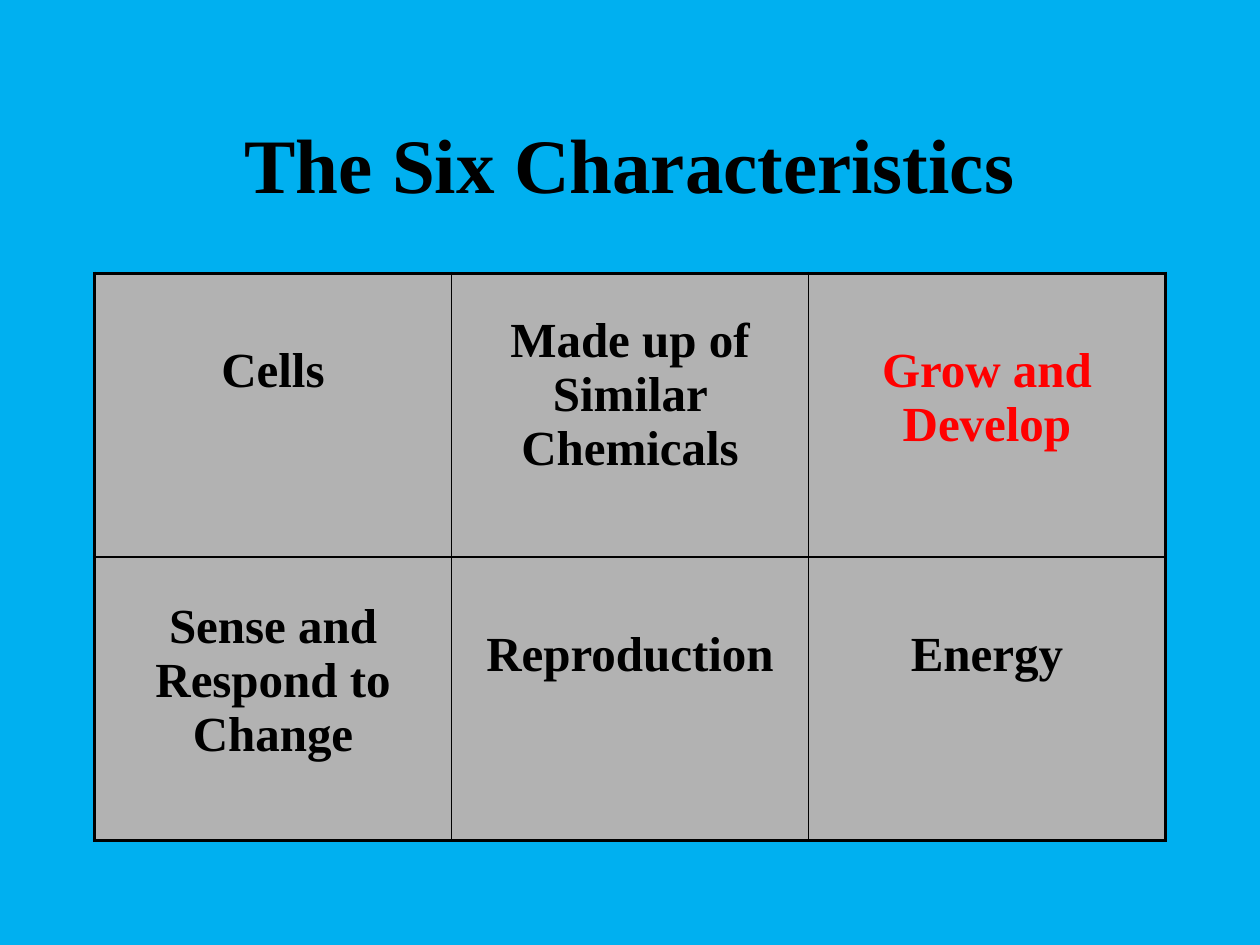
from lxml import etree
from pptx import Presentation
from pptx.dml.color import RGBColor
from pptx.enum.text import MSO_ANCHOR, PP_ALIGN
from pptx.oxml.ns import qn
from pptx.util import Inches, Pt

CENTER = PP_ALIGN.CENTER
TOP, MIDDLE = MSO_ANCHOR.TOP, MSO_ANCHOR.MIDDLE

COLORS = {"background": "00B0F0", "cell": "B2B2B2", "text": "000000",
          "highlight": "FF0000", "border": "000000"}
FONT = "Times New Roman"
TITLE = "The Six Characteristics"
# Each characteristic: wording, colour, space above the text in inches
CHARACTERISTICS = [
    [("Cells", "text", 0.56),
     ("Made up of Similar Chemicals", "text", 0.32),
     ("Grow and Develop", "highlight", 0.56)],
    [("Sense and Respond to Change", "text", 0.34),
     ("Reproduction", "text", 0.56),
     ("Energy", "text", 0.56)],
]
LEFT, WIDTH = 0.75, 8.5
TITLE_TOP, TITLE_HEIGHT = 0.67, 1.25
TABLE_TOP, TABLE_HEIGHT = 2.17, 4.5
OUTER_BORDER, INNER_BORDER = 2.25, 1


def rgb(name):
    return RGBColor.from_string(COLORS[name])


def write(frame, wording, size, color):
    frame.text = wording
    paragraph = frame.paragraphs[0]
    paragraph.alignment = CENTER
    font = paragraph.runs[0].font
    for attribute, value in {"name": FONT, "size": Pt(size), "bold": True}.items():
        setattr(font, attribute, value)
    font.color.rgb = rgb(color)


def add_border(cell, side, points):
    line = etree.SubElement(cell._tc.get_or_add_tcPr(), qn(f"a:ln{side}"),
                            w=str(Pt(points)))
    fill = etree.SubElement(line, qn("a:solidFill"))
    etree.SubElement(fill, qn("a:srgbClr"), val=COLORS["border"])


prs = Presentation()
prs.slide_width, prs.slide_height = Inches(10), Inches(7.5)
slide = prs.slides.add_slide(prs.slide_layouts[5])
slide.background.fill.solid()
slide.background.fill.fore_color.rgb = rgb("background")

title = slide.shapes.title
title.left, title.top = Inches(LEFT), Inches(TITLE_TOP)
title.width, title.height = Inches(WIDTH), Inches(TITLE_HEIGHT)
title.text_frame.vertical_anchor = MIDDLE
write(title.text_frame, TITLE, 44, "text")

row_count, column_count = len(CHARACTERISTICS), len(CHARACTERISTICS[0])
table = slide.shapes.add_table(
    row_count, column_count, Inches(LEFT), Inches(TABLE_TOP),
    Inches(WIDTH), Inches(TABLE_HEIGHT)).table
table.first_row = table.horz_banding = False

for r, row in enumerate(CHARACTERISTICS):
    for c, (wording, color, space_above) in enumerate(row):
        cell = table.cell(r, c)
        outer_sides = {"L": c == 0, "R": c == column_count - 1,
                       "T": r == 0, "B": r == row_count - 1}
        for side, is_outer in outer_sides.items():
            add_border(cell, side, OUTER_BORDER if is_outer else INNER_BORDER)
        cell.fill.solid()
        cell.fill.fore_color.rgb = rgb("cell")
        cell.vertical_anchor = TOP
        cell.margin_top = Inches(space_above)
        write(cell.text_frame, wording, 28, color)

prs.save("out.pptx")
